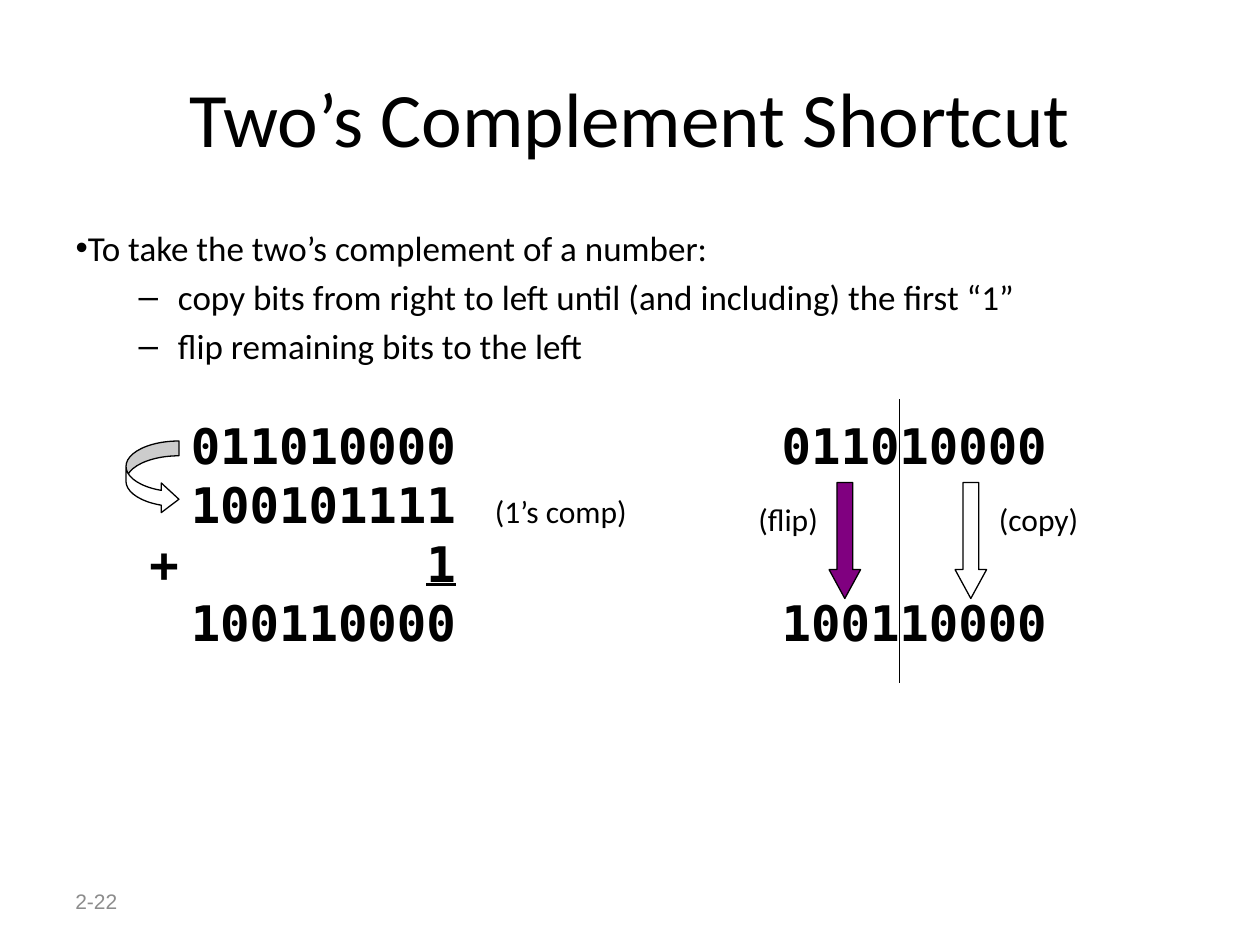
from lxml import etree
from pptx import Presentation
from pptx.dml.color import RGBColor
from pptx.enum.shapes import MSO_CONNECTOR, MSO_SHAPE
from pptx.enum.text import MSO_ANCHOR
from pptx.oxml.ns import qn
from pptx.util import Inches, Pt

BLACK = RGBColor(0, 0, 0)
WHITE = RGBColor(255, 255, 255)
PURPLE = RGBColor(128, 0, 128)
GRAY = RGBColor(0x8C, 0x8C, 0x8C)
MIDDLE = MSO_ANCHOR.MIDDLE
STRAIGHT = MSO_CONNECTOR.STRAIGHT
CURVED = MSO_SHAPE.CURVED_RIGHT_ARROW
DOWN = MSO_SHAPE.DOWN_ARROW

SANS, MONO = "Calibri", "DejaVu Sans Mono"
TITLE = "Two’s Complement Shortcut"
STEPS = [
    (0, "To take the two’s complement of a number:"),
    (1, "copy bits from right to left until (and including) the first “1”"),
    (1, "flip remaining bits to the left"),
]
BITS = {"size": 28, "font": MONO, "bold": True}
CARRY = {**BITS, "underline": True}
NOTE = {"size": 18, "font": SANS}
SUM_ROWS = [
    [("\t\t011010000\t\t\t011010000", BITS)],
    [("\t\t100101111\t", BITS), ("(1’s comp)", NOTE)],
    [("\t+\t", BITS), ("1", CARRY)],
    [("\t\t100110000\t\t\t100110000", BITS)],
]
TAB_STOPS = [(0.24, "r"), (2.44, "r"), (2.75, "l"), (4.07, "r"), (7.13, "r"), (7.37, "l")]
DOWN_ADJUST = (0.5, 0.917)
ARROWS = [
    (CURVED, (1, 3.5, 0.42, 0.58), WHITE, (0.28, 0.56, 0.333)),
    (DOWN, (7.58, 3.83, 0.25, 0.92), WHITE, DOWN_ADJUST),
    (DOWN, (6.58, 3.83, 0.25, 0.92), PURPLE, DOWN_ADJUST),
]
LABELS = [
    ("(copy)", (7.83, 3.92, 0.9, 0.4)),
    ("(flip)", (5.92, 3.92, 0.69, 0.4)),
]
SPLIT_X, SPLIT_TOP, SPLIT_BOTTOM = 7.14, 3.17, 5.42


def inches(box):
    return [Inches(length) for length in box]


def place(part, box):
    part.left, part.top, part.width, part.height = inches(box)


def style(run, size, font=SANS, color=BLACK, bold=False, underline=False):
    run.font.size = Pt(size)
    run.font.name = font
    run.font.color.rgb = color
    run.font.bold = bold
    run.font.underline = underline


def add_label(slide, words, box, wrap=False, **look):
    label = slide.shapes.add_textbox(*inches(box))
    label.text_frame.word_wrap = wrap
    label.text_frame.text = words
    style(label.text_frame.paragraphs[0].runs[0], **look)
    return label


def add_heading_and_steps(slide):
    title, body = slide.placeholders
    place(title, (0.5, 0.3, 9, 1.25))
    title.text_frame.text = TITLE
    style(title.text_frame.paragraphs[0].runs[0], 44)

    place(body, (0.5, 1.75, 9, 4.95))
    body.text_frame.text = "\n".join(words for _, words in STEPS)
    for paragraph, (level, _) in zip(body.text_frame.paragraphs, STEPS):
        paragraph.level = level
        if level == 0:
            properties = paragraph._p.get_or_add_pPr()
            properties.set("marL", "0")
            properties.set("indent", "0")
        style(paragraph.runs[0], 20)


def add_sums(slide):
    sums = slide.shapes.add_textbox(*inches((1.08, 3.25, 8.75, 1.97))).text_frame
    sums.word_wrap = True
    for index, row in enumerate(SUM_ROWS):
        paragraph = sums.add_paragraph() if index else sums.paragraphs[0]
        tabs = etree.SubElement(paragraph._p.get_or_add_pPr(), qn("a:tabLst"))
        for position, side in TAB_STOPS:
            etree.SubElement(tabs, qn("a:tab"), pos=str(Inches(position)), algn=side)
        for words, look in row:
            run = paragraph.add_run()
            run.text = words
            style(run, **look)


def add_arrow(slide, preset, box, fill, adjustments):
    arrow = slide.shapes.add_shape(preset, *inches(box))
    arrow.shadow.inherit = False
    for index, value in enumerate(adjustments):
        arrow.adjustments[index] = value
    arrow.fill.solid()
    arrow.fill.fore_color.rgb = fill
    arrow.line.color.rgb = BLACK
    arrow.line.width = Pt(0.75)


def add_split(slide):
    split = slide.shapes.add_connector(
        STRAIGHT, *inches((SPLIT_X, SPLIT_TOP, SPLIT_X, SPLIT_BOTTOM)))
    split.line.color.rgb = BLACK
    split.line.width = Pt(0.75)
    etree.SubElement(split._element.spPr, qn("a:effectLst"))


def main():
    deck = Presentation()
    deck.slide_width, deck.slide_height = Inches(10), Inches(7.5)
    slide = deck.slides.add_slide(deck.slide_layouts[1])
    number = add_label(slide, "2-22", (0.5, 6.95, 2.33, 0.4), wrap=True,
                       size=12, font="Arial", color=GRAY)
    number.text_frame.vertical_anchor = MIDDLE
    add_heading_and_steps(slide)
    add_sums(slide)
    for arrow in ARROWS:
        add_arrow(slide, *arrow)
    for words, box in LABELS:
        add_label(slide, words, box, **NOTE)
    add_split(slide)
    deck.save("out.pptx")


if __name__ == "__main__":
    main()
